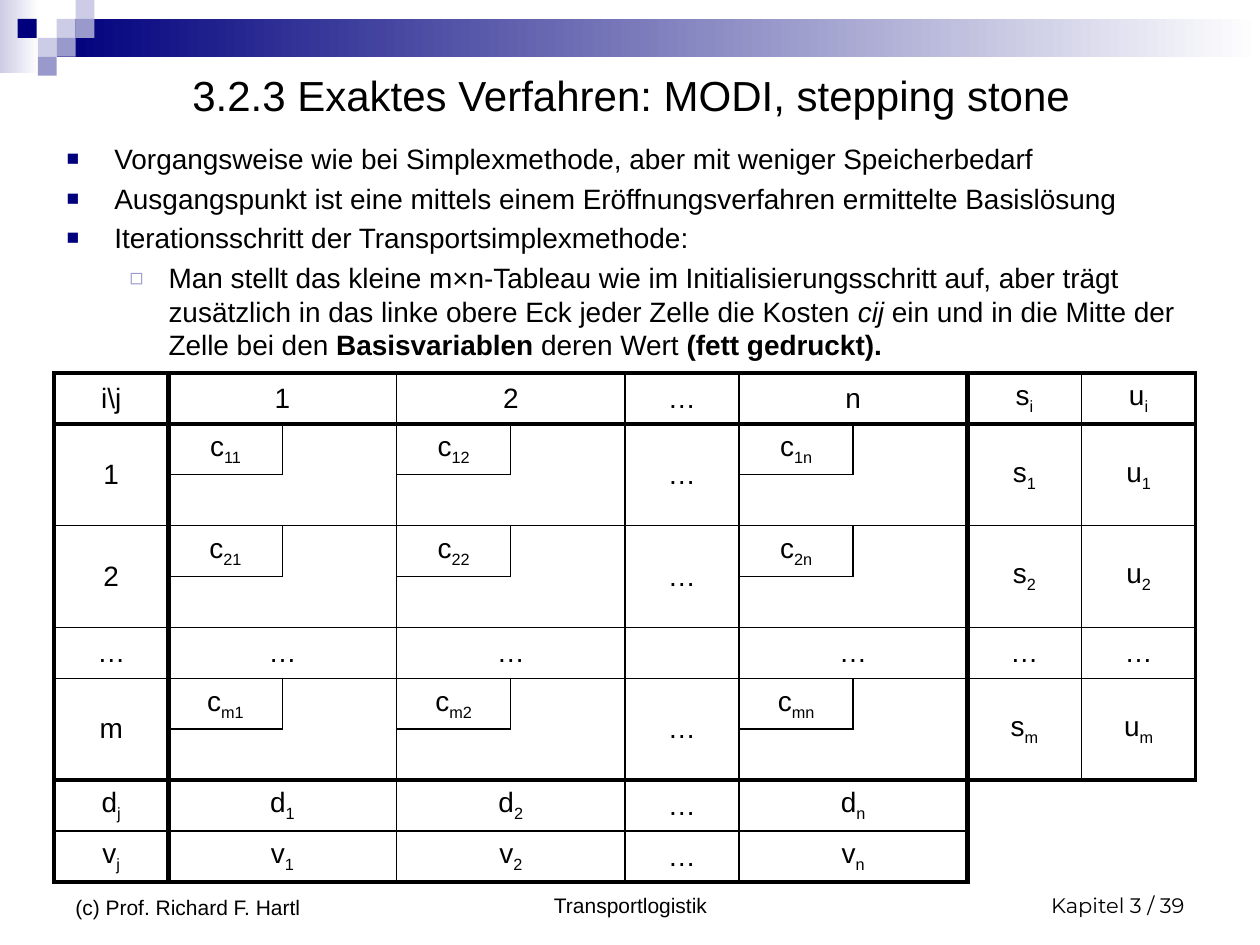
from lxml import etree
from pptx import Presentation
from pptx.dml.color import RGBColor
from pptx.enum.shapes import MSO_SHAPE
from pptx.enum.text import MSO_ANCHOR, PP_ALIGN
from pptx.oxml.ns import qn
from pptx.util import Inches, Pt

BLACK = RGBColor(0x00, 0x00, 0x00)
WHITE = RGBColor(0xFF, 0xFF, 0xFF)
NAVY = RGBColor(0x00, 0x00, 0x7D)
LILAC = RGBColor(0x99, 0x99, 0xCC)
PALE = RGBColor(0xCC, 0xCC, 0xE6)
LEFT, CENTER, RIGHT = PP_ALIGN.LEFT, PP_ALIGN.CENTER, PP_ALIGN.RIGHT
TOP, MIDDLE, BOTTOM = MSO_ANCHOR.TOP, MSO_ANCHOR.MIDDLE, MSO_ANCHOR.BOTTOM
RECTANGLE = MSO_SHAPE.RECTANGLE

# Tableau: text of each row by column; "_" starts a subscript
COLUMNS = (0, 1, 3, 5, 6, 8, 9)
TABLEAU = {
    0: ("i\\j", "1", "2", "…", "n", "s_i", "u_i"),
    1: ("1", "c_11", "c_12", "…", "c_1n", "s_1", "u_1"),
    3: ("2", "c_21", "c_22", "…", "c_2n", "s_2", "u_2"),
    5: ("…", "…", "…", "", "…", "…", "…"),
    6: ("m", "c_m1", "c_m2", "…", "c_mn", "s_m", "u_m"),
    8: ("d_j", "d_1", "d_2", "…", "d_n", "", ""),
    9: ("v_j", "v_1", "v_2", "…", "v_n", "", ""),
}
SIZE = 10
DOTS_ROW = 5
PAIRS = (1, 3, 6)  # rows and columns that form a double with the next one
RULES = {0: 2.25, 1: 3, 8: 3, 10: 2.25}  # heavy grid lines; all others are 1 pt
OUTSIDE = "outside"


def region(row, column):
    """Name the area a cell belongs to; no line is drawn inside an area."""
    if row >= 8 and column >= 8:
        return OUTSIDE
    top = row - 1 if row - 1 in PAIRS else row
    left = column - 1 if column - 1 in PAIRS else column
    is_cost = row in PAIRS and column in PAIRS
    return top, left, is_cost


class SlideBuilder:
    font = "Arial"
    body_size = 16

    def __init__(self, page):
        self.page = page

    def rectangle(self, left, top, width, height, color, fade_to=None):
        shape = self.page.shapes.add_shape(
            RECTANGLE, Inches(left), Inches(top), Inches(width), Inches(height))
        shape.shadow.inherit = False
        shape.line.fill.background()
        if fade_to is None:
            shape.fill.solid()
            shape.fill.fore_color.rgb = color
        else:
            shape.fill.gradient()
            shape.fill.gradient_angle = 0
            for stop, shade in zip(shape.fill.gradient_stops, (color, fade_to)):
                stop.color.rgb = shade

    def span(self, para, text, size, font=None, bold=False, italic=False):
        span = para.add_run()
        span.text = text
        span.font.name = font or self.font
        span.font.size = Pt(size)
        span.font.color.rgb = BLACK
        span.font.bold = bold
        span.font.italic = italic
        return span

    def text(self, left, top, width, height, spans, size, align=LEFT,
             anchor=TOP, font=None):
        box = self.page.shapes.add_textbox(
            Inches(left), Inches(top), Inches(width), Inches(height))
        box.text_frame.word_wrap = True
        box.text_frame.vertical_anchor = anchor
        para = box.text_frame.paragraphs[0]
        para.alignment = align
        for text, style in spans:
            self.span(para, text, size, font, **style)
        return para

    def bullet(self, top, height, spans, mark, color, percent, margin, hanging):
        para = self.text(0.43, top, 9, height, spans, self.body_size)
        para.space_before = Pt(0.2 * self.body_size)
        props = para._p.get_or_add_pPr()
        props.set("marL", str(Inches(margin)))
        props.set("indent", str(-Inches(hanging)))
        shade = etree.SubElement(props, qn("a:buClr"))
        etree.SubElement(shade, qn("a:srgbClr"), val=str(color))
        etree.SubElement(props, qn("a:buSzPct"), val=str(percent * 1000))
        etree.SubElement(props, qn("a:buFont"), typeface=self.font)
        etree.SubElement(props, qn("a:buChar"), char=mark)

    def cell_text(self, cell, text):
        para = cell.text_frame.paragraphs[0]
        para.alignment = CENTER
        para.space_before = Pt(0.2 * self.body_size)
        base, _, index = text.partition("_")
        self.span(para, base, self.body_size)
        if index:
            sub = self.span(para, index, self.body_size)
            sub._r.get_or_add_rPr().set("baseline", "-25000")

    def cell_borders(self, cell, widths):
        props = cell._tc.get_or_add_tcPr()
        for position, (tag, width) in enumerate(widths.items()):
            line = etree.Element(qn("a:" + tag), w=str(Pt(width or 0)))
            if width:
                fill = etree.SubElement(line, qn("a:solidFill"))
                etree.SubElement(fill, qn("a:srgbClr"), val=str(BLACK))
            else:
                etree.SubElement(line, qn("a:noFill"))
            props.insert(position, line)

    def tableau(self, left, top, width, height):
        table = self.page.shapes.add_table(
            SIZE, SIZE, Inches(left), Inches(top), Inches(width), Inches(height)).table
        table.first_row = table.horz_banding = False
        for row in range(SIZE):
            for column in range(SIZE):
                cell = table.cell(row, column)
                cell.fill.background()
                cell.vertical_anchor = MIDDLE
                cell.margin_left = cell.margin_right = 0
                cell.margin_top = cell.margin_bottom = 0
                self.cell_borders(cell, self.border_widths(row, column))

        # Join the doubles outside the cost cells
        for first in PAIRS:
            for other in range(SIZE):
                if other in (0, 5, 8, 9):
                    table.cell(first, other).merge(table.cell(first + 1, other))
                if other in (0, DOTS_ROW, 8, 9):
                    table.cell(other, first).merge(table.cell(other, first + 1))

        for row, texts in TABLEAU.items():
            for column, text in zip(COLUMNS, texts):
                if text:
                    self.cell_text(table.cell(row, column), text)
                    if row == DOTS_ROW:
                        table.cell(row, column)._tc.get_or_add_tcPr().set("vert", "eaVert")

    def border_widths(self, row, column):
        area = region(row, column)
        # A joined double carries the outline of the whole area
        paired_row = row in PAIRS or row - 1 in PAIRS
        paired_column = column in PAIRS or column - 1 in PAIRS
        bottom, right = row + 1, column + 1
        if paired_row != paired_column:
            row, column = area[:2]
            bottom, right = row + 1 + paired_row, column + 1 + paired_column
        sides = {
            "lnL": (column, (row, column - 1)),
            "lnR": (right, (row, right)),
            "lnT": (row, (row - 1, column)),
            "lnB": (bottom, (bottom, column)),
        }
        widths = {}
        for tag, (grid_line, neighbour) in sides.items():
            open_edge = area == OUTSIDE and grid_line == SIZE
            hidden = open_edge or region(*neighbour) == area
            widths[tag] = None if hidden else RULES.get(grid_line, 1)
        return widths


def main():
    deck = Presentation()
    deck.slide_width, deck.slide_height = Inches(10), Inches(7.5)
    builder = SlideBuilder(deck.slides.add_slide(deck.slide_layouts[6]))

    # Header band and squares
    builder.rectangle(0, 0, 0.31, 0.58, PALE, WHITE)
    builder.rectangle(0.45, 0.15, 9.55, 0.3, NAVY, WHITE)
    for left, top, color in (
            (0.45, 0.15, PALE), (0.6, 0, PALE), (0.6, 0.15, LILAC), (0.3, 0.3, PALE),
            (0.14, 0.15, NAVY), (0.45, 0.3, LILAC), (0.3, 0.45, LILAC)):
        builder.rectangle(left, top, 0.15, 0.15, color)

    # Footer
    builder.text(3.42, 6.83, 3.17, 0.5, [("Transportlogistik", {})], 12, CENTER, BOTTOM)
    builder.text(7.17, 6.83, 2.33, 0.5, [("Kapitel 3 / 39", {})], 12, RIGHT, BOTTOM,
                 "Montserrat")
    builder.text(0.5, 6.83, 2.33, 0.52, [("(c) Prof. Richard F. Hartl", {})], 12,
                 anchor=BOTTOM)

    # Title and bullets
    builder.text(0.51, 0.44, 9, 0.63,
                 [("3.2.3 Exaktes Verfahren: MODI, stepping stone", {})], 24, CENTER, MIDDLE)
    for top, line in (
            (1.07, "Vorgangsweise wie bei Simplexmethode, aber mit weniger Speicherbedarf"),
            (1.39, "Ausgangspunkt ist eine mittels einem Eröffnungsverfahren ermittelte "
                   "Basislösung"),
            (1.7, "Iterationsschritt der Transportsimplexmethode:")):
        builder.bullet(top, 0.31, [(line, {})], "■", NAVY, 75, 0.38, 0.38)
    builder.bullet(2.02, 0.87, [
        ("Man stellt das kleine m×n-Tableau wie im Initialisierungsschritt auf, aber trägt "
         "zusätzlich in das linke obere Eck jeder Zelle die Kosten ", {}),
        ("cij", {"italic": True}),
        (" ein und in die Mitte der Zelle bei den ", {}),
        ("Basisvariablen", {"bold": True}),
        (" deren Wert ", {}),
        ("(fett gedruckt).", {"bold": True}),
    ], "◻", LILAC, 80, 0.81, 0.31)

    # Transport tableau
    builder.tableau(0.43, 2.96, 9.06, 4.04)
    deck.save("out.pptx")


if __name__ == "__main__":
    main()
